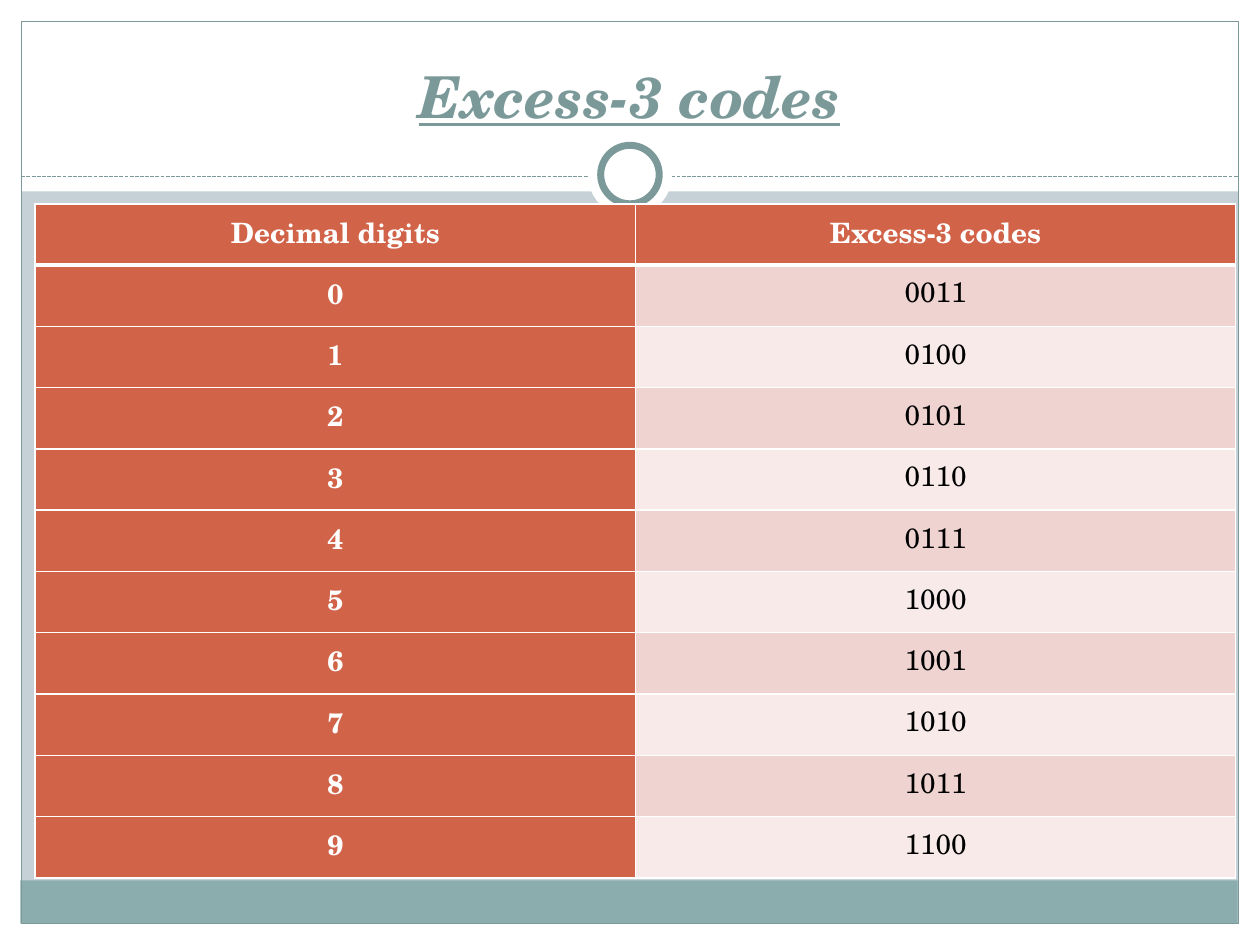
from lxml import etree
from pptx import Presentation
from pptx import util as u
from pptx.dml.color import RGBColor
from pptx.enum import dml, shapes, text
from pptx.oxml import ns

TITLE = "Excess-3 codes"
HEADER = ("Decimal digits", "Excess-3 codes")
CODES = [(str(digit), f"{digit + 3:04b}") for digit in range(10)]

FONT = "TeX Gyre Schola"
COLORS = {
    "background": "C5D1D7", "white": "FFFFFF", "black": "000000",
    "teal": "7C999A", "footer": "8CADAE",
    "accent": "D16349", "dark band": "EED3D0", "light band": "F7EAE9",
}
WIDTH, HEIGHT, MARGIN = 25.4, 19.05, 0.43
RULE_Y = 3.56
TABLE = (0.71, 4.11, 24.2, 13.59)

RECT, OVAL = shapes.MSO_SHAPE.RECTANGLE, shapes.MSO_SHAPE.OVAL
DECORATION = [
    (RECT, (0, HEIGHT - MARGIN, WIDTH, MARGIN), "white", None, 0),
    (RECT, (0, 0, WIDTH, 3.86), "white", None, 0),
    (RECT, (0, 0, MARGIN, HEIGHT), "white", None, 0),
    (RECT, (WIDTH - MARGIN, 0, MARGIN, HEIGHT), "white", None, 0),
    (RECT, (0.41, 17.75, 24.54, 0.87), "footer", None, 0),
    (RECT, (MARGIN, MARGIN, WIDTH - 2 * MARGIN, HEIGHT - 2 * MARGIN), None, "teal", 0.75),
]
RING = [
    (OVAL, (11.85, 2.67, 1.7, 1.7), "white", None, 0),
    (OVAL, (12.11, 2.93, 1.18, 1.18), "white", "teal", 4),
]


def color(name):
    return RGBColor.from_string(COLORS[name])


def lengths(values):
    return [u.Cm(value) for value in values]


def add_shapes(page, items):
    for kind, place, fill, line, weight in items:
        shape = page.shapes.add_shape(kind, *lengths(place))
        shape.shadow.inherit = False
        if fill:
            shape.fill.solid()
            shape.fill.fore_color.rgb = color(fill)
        else:
            shape.fill.background()
        if line:
            shape.line.color.rgb = color(line)
            shape.line.width = u.Pt(weight)
        else:
            shape.line.fill.background()


def add_rule(page):
    ends = lengths((MARGIN, RULE_Y, WIDTH - MARGIN, RULE_Y))
    rule = page.shapes.add_connector(shapes.MSO_CONNECTOR.STRAIGHT, *ends)
    rule.line.color.rgb = color("teal")
    rule.line.width = u.Pt(0.75)
    rule.line.dash_style = dml.MSO_LINE.SQUARE_DOT
    etree.SubElement(rule.element.spPr, ns.qn("a:effectLst"))


def style_text(para, size, shade, bold):
    para.alignment = text.PP_ALIGN.CENTER
    for span in para.runs:
        span.font.name = FONT
        span.font.size = u.Pt(size)
        span.font.bold = bold
        span.font.color.rgb = color(shade)


def add_title(page):
    box = page.shapes.add_textbox(*lengths((0.84, 0.64, 23.7, 2.11)))
    frame = box.text_frame
    frame.word_wrap = True
    frame.vertical_anchor = text.MSO_ANCHOR.BOTTOM
    frame.text = TITLE
    para = frame.paragraphs[0]
    style_text(para, 33, "teal", True)
    para.runs[0].font.italic = True
    para.runs[0].font.underline = True


def set_borders(cell, weights):
    properties = cell._tc.get_or_add_tcPr()
    for side, weight in weights.items():
        line = etree.SubElement(properties, ns.qn(f"a:ln{side}"), w=str(u.Pt(weight)))
        fill = etree.SubElement(line, ns.qn("a:solidFill"))
        etree.SubElement(fill, ns.qn("a:srgbClr"), val=COLORS["white"])


def add_code_table(page):
    rows = [HEADER] + CODES
    left, top, width, height = lengths(TABLE)
    table = page.shapes.add_table(len(rows), len(HEADER), left, top, width, height).table
    for column in table.columns:
        column.width = width // len(HEADER)
    for row in table.rows:
        row.height = height // len(rows)
    for i, values in enumerate(rows):
        for j, value in enumerate(values):
            cell = table.cell(i, j)
            strong = i == 0 or j == 0
            band = "dark band" if i % 2 else "light band"
            set_borders(cell, {"L": 1, "R": 1, "T": 3 if i == 1 else 1, "B": 3 if i == 0 else 1})
            cell.fill.solid()
            cell.fill.fore_color.rgb = color("accent" if strong else band)
            cell.margin_left = cell.margin_right = u.Cm(0.18)
            cell.margin_top = cell.margin_bottom = 0
            cell.text_frame.text = value
            para = cell.text_frame.paragraphs[0]
            para.line_spacing = 1.15
            style_text(para, 16, "white" if strong else "black", strong)


def main():
    deck = Presentation()
    deck.slide_width, deck.slide_height = lengths((WIDTH, HEIGHT))
    page = deck.slides.add_slide(deck.slide_layouts[6])
    page.background.fill.solid()
    page.background.fill.fore_color.rgb = color("background")
    add_shapes(page, DECORATION)
    add_rule(page)
    add_shapes(page, RING)
    add_title(page)
    add_code_table(page)
    deck.save("out.pptx")


if __name__ == "__main__":
    main()
